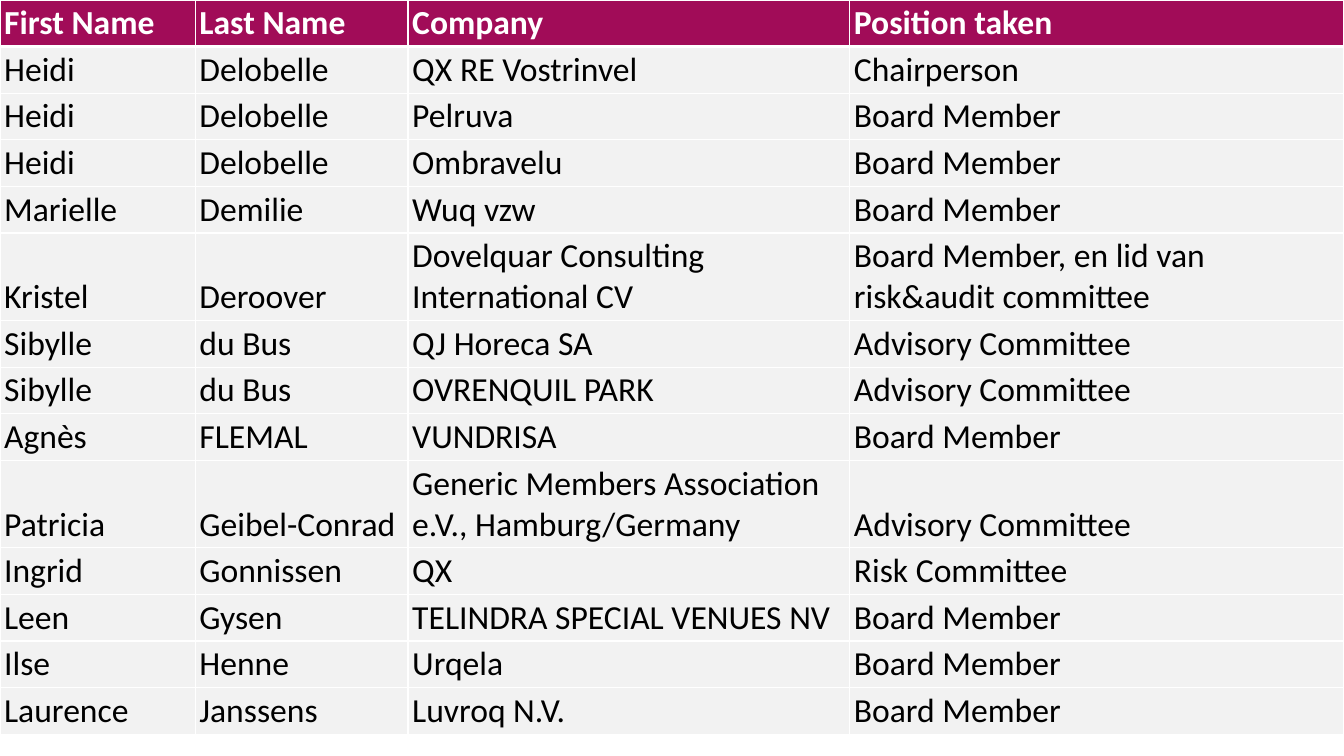
from lxml import etree
from pptx import Presentation
from pptx.dml.color import RGBColor
from pptx.enum import text
from pptx.oxml import ns
from pptx.util import Pt

PX = 6350  # EMU per px, 1920 x 1080 px slide
WINE = RGBColor(0xA1, 0x0C, 0x58)
GREY = RGBColor(0xF2, 0xF2, 0xF2)
WHITE = RGBColor(0xFF, 0xFF, 0xFF)
BLACK = RGBColor(0, 0, 0)

WIDTHS = [279, 304, 631, 706]
ROW = 66
ROWS = [
    ("First Name", "Last Name", "Company", "Position taken"),
    ("Heidi", "Delobelle", "QX RE Vostrinvel", "Chairperson"),
    ("Heidi", "Delobelle", "Pelruva", "Board Member"),
    ("Heidi", "Delobelle", "Ombravelu", "Board Member"),
    ("Marielle", "Demilie", "Wuq vzw", "Board Member"),
    ("Kristel", "Deroover", "Dovelquar Consulting International CV",
     "Board Member, en lid van risk&audit committee"),
    ("Sibylle", "du Bus", "QJ Horeca SA", "Advisory Committee"),
    ("Sibylle", "du Bus", "OVRENQUIL PARK", "Advisory Committee"),
    ("Agnès", "FLEMAL", "VUNDRISA", "Board Member"),
    ("Patricia", "Geibel-Conrad",
     "Generic Members Association e.V., Hamburg/Germany", "Advisory Committee"),
    ("Ingrid", "Gonnissen", "QX", "Risk Committee"),
    ("Leen", "Gysen", "TELINDRA SPECIAL VENUES NV", "Board Member"),
    ("Ilse", "Henne", "Urqela", "Board Member"),
    ("Laurence", "Janssens", "Luvroq N.V.", "Board Member"),
]


def add_edge(cell, side, width):
    props = cell._tc.get_or_add_tcPr()
    line = etree.SubElement(props, ns.qn("a:ln" + side), w=str(Pt(width)))
    fill = etree.SubElement(line, ns.qn("a:solidFill"))
    etree.SubElement(fill, ns.qn("a:srgbClr"), val=str(WHITE))


prs = Presentation()
prs.slide_width, prs.slide_height = 1920 * PX, 1080 * PX
slide = prs.slides.add_slide(prs.slide_layouts[6])

frame = slide.shapes.add_table(len(ROWS), len(WIDTHS), 0, 0,
                               sum(WIDTHS) * PX, len(ROWS) * ROW * PX)
table = frame.table
table.horz_banding = False
for col, width in zip(table.columns, WIDTHS):
    col.width = width * PX

for r, names in enumerate(ROWS):
    head = r == 0
    table.rows[r].height = ROW * PX
    for c, name in enumerate(names):
        cell = table.cell(r, c)
        cell.margin_left = cell.margin_right = 6 * PX
        cell.margin_top = cell.margin_bottom = 4 * PX
        cell.vertical_anchor = text.MSO_ANCHOR.BOTTOM
        for side in ("L", "R", "T", "B"):
            thick = (r, side) in [(0, "B"), (1, "T")]
            add_edge(cell, side, 3 if thick else 1)
        cell.fill.solid()
        cell.fill.fore_color.rgb = WINE if head else GREY
        cell.text_frame.text = name
        font = cell.text_frame.paragraphs[0].runs[0].font
        font.name, font.size, font.bold = "Calibri", Pt(24), head
        font.color.rgb = WHITE if head else BLACK

prs.save("out.pptx")
